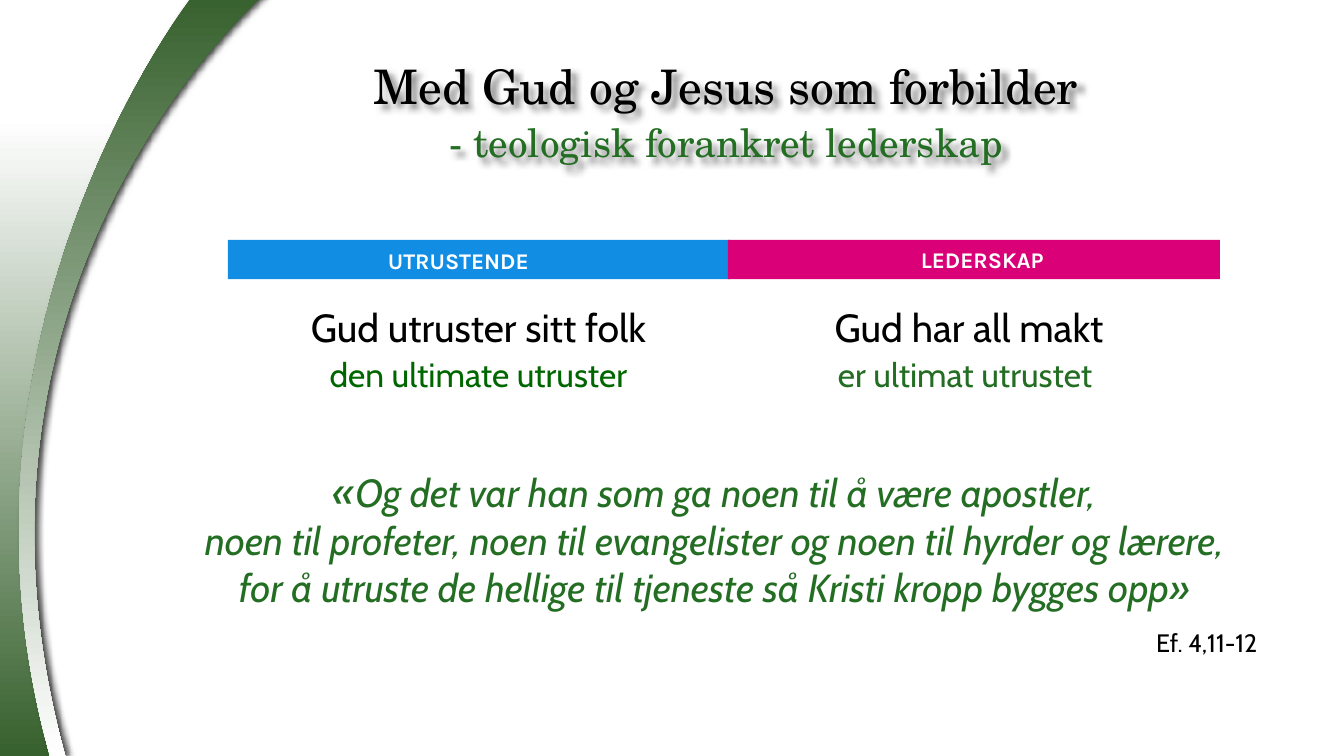
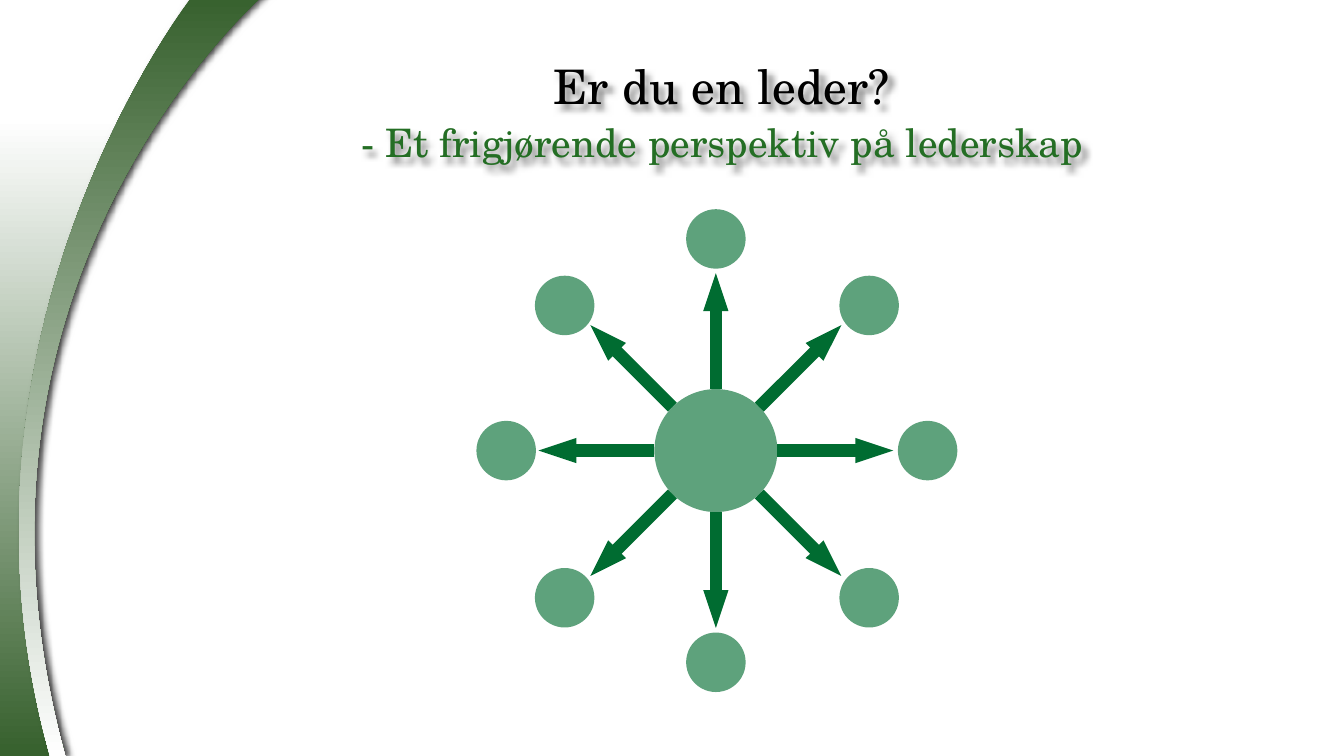
import math
from dataclasses import dataclass

from lxml import etree
from pptx import Presentation
from pptx.dml.color import RGBColor
from pptx.enum.shapes import MSO_CONNECTOR, MSO_SHAPE
from pptx.enum.text import MSO_ANCHOR, MSO_AUTO_SIZE, PP_ALIGN
from pptx.oxml.ns import qn
from pptx.util import Pt

PX = 9144
SLIDE_WIDTH, SLIDE_HEIGHT = 1333, 750
TWO_CONTENT, TITLE_ONLY = 3, 5
RECTANGLE, OVAL = MSO_SHAPE.RECTANGLE, MSO_SHAPE.OVAL
STRAIGHT = MSO_CONNECTOR.STRAIGHT
LEFT, CENTER, RIGHT = PP_ALIGN.LEFT, PP_ALIGN.CENTER, PP_ALIGN.RIGHT
MIDDLE, TOP = MSO_ANCHOR.MIDDLE, MSO_ANCHOR.TOP
NO_AUTOFIT = MSO_AUTO_SIZE.NONE


@dataclass(frozen=True)
class Theme:
    """Colours, fonts and type sizes of the deck."""
    black: str = "000000"
    white: str = "FFFFFF"
    green: str = "246E24"
    bright_green: str = "006600"
    forest: str = "36602D"
    network: str = "006C31"
    blue: str = "118DE4"
    pink: str = "DA0077"
    title_font: str = "TeX Gyre Schola"
    body_font: str = "Cabin"
    label_font: str = "Karla"
    title: int = 34
    opening_mark: int = 30
    lead: int = 28
    support: int = 24
    reference: int = 18
    label: int = 16


THEME = Theme()


def rgb(code):
    """Turn a hex code into a colour."""
    return RGBColor.from_string(code)


def emu(*lengths):
    """Scale px lengths to EMU."""
    return [round(length * PX) for length in lengths]


def place(part, box):
    """Move a part to a px box."""
    part.left, part.top, part.width, part.height = emu(*box)


def style_run(run, font, size, color, bold=False, italic=False):
    """Format one run."""
    run.font.name, run.font.size = font, Pt(size)
    run.font.bold, run.font.italic = bold, italic
    run.font.color.rgb = rgb(color)


def write(part, lines, font, align=CENTER, anchor=TOP, spacing=1.0, **emphasis):
    """Fill a part with one paragraph for each (text, size, colour) line."""
    frame = part.text_frame
    frame.text = "\n".join(text for text, _, _ in lines)
    frame.word_wrap, frame.auto_size = True, NO_AUTOFIT
    frame.vertical_anchor = anchor
    for paragraph, (_, size, color) in zip(frame.paragraphs, lines):
        paragraph.alignment, paragraph.line_spacing = align, spacing
        paragraph.space_before = Pt(0)
        style_run(paragraph.runs[0], font, size, color, **emphasis)
    return frame


def remove_bullets(part):
    """Clear bullets and indents."""
    for paragraph in part.element.iter(qn("a:p")):
        properties = paragraph.get_or_add_pPr()
        properties.set("marL", "0")
        properties.set("indent", "0")
        etree.SubElement(properties, qn("a:buNone"))


def add_shadow(part, blur, distance, angle, alpha):
    """Give a part a black outer shadow."""
    part.shadow.inherit = False
    shadow = etree.SubElement(
        part.element.spPr.find(qn("a:effectLst")), qn("a:outerShdw"),
        blurRad=str(Pt(blur)), dist=str(Pt(distance)),
        dir=str(angle * 60000), algn="tl", rotWithShape="0")
    color = etree.SubElement(shadow, qn("a:srgbClr"), val=THEME.black)
    etree.SubElement(color, qn("a:alpha"), val=str(alpha * 1000))


def add_solid(slide, kind, box, color, opacity=100):
    """Draw a borderless filled shape."""
    solid = slide.shapes.add_shape(kind, *emu(*box))
    solid.shadow.inherit = False
    solid.fill.solid()
    solid.fill.fore_color.rgb = rgb(color)
    solid.line.fill.background()
    if opacity < 100:
        fill = solid.element.spPr.find(qn("a:solidFill"))
        etree.SubElement(fill[0], qn("a:alpha"), val=str(opacity * 1000))
    return solid


def add_fade(slide, start, segments, top_color, bottom_color):
    """Draw lines (one point) and curves (three points) with a vertical gradient."""
    builder = slide.shapes.build_freeform(*emu(*start), scale=1.0)
    builder.add_line_segments(
        [emu(*point) for segment in segments for point in segment], close=True)
    fade = builder.convert_to_shape()
    steps = iter(list(fade.element.iter(qn("a:lnTo"))))
    for segment in segments:
        first, *others = [next(steps) for _ in segment]
        if others:
            first.tag = qn("a:cubicBezTo")
        for step in others:
            first.append(step[0])
            step.getparent().remove(step)
    fade.shadow.inherit = False
    fade.fill.gradient()
    fade.fill.gradient_angle = 270
    for stop, color in zip(fade.fill.gradient_stops, (top_color, bottom_color)):
        stop.color.rgb = rgb(color)
    fade.line.fill.background()
    return fade


def decorate_master(prs, slide):
    """Draw the curved side band and move it to the master."""
    corner = add_solid(slide, RECTANGLE, (-3, 0, 151, 123), THEME.white)
    band = add_fade(slide, (-3, 117), [
        [(62, 117), (38, 117), (148, 117)],
        [(-38, 432), (47, 689), (62, 750)],
        [(29, 750), (-3, 750), (-3, 750)],
        [(-14, 644), (-3, 117), (-3, 117)],
    ], THEME.white, THEME.forest)
    swoosh = add_fade(slide, (50, 751), [
        [(58, 751), (65, 751), (65, 751)],
        [(-67, 273), (264, -7), (264, -7)],
        [(194, -8)],
        [(194, -8), (-70, 326), (50, 751)],
    ], THEME.forest, THEME.white)
    add_shadow(swoosh, 5, 3, 0, 75)
    for position, part in enumerate((corner, band, swoosh), start=2):
        prs.slide_master.shapes.element.insert(position, part.element)


def add_heading(slide, box, title, subtitle):
    """Fill the title placeholder with a shadowed title and subtitle."""
    heading = slide.shapes.title
    place(heading, box)
    write(heading, [(title, THEME.title, THEME.black),
                    (subtitle, THEME.lead, THEME.green)],
          THEME.title_font, anchor=MIDDLE, spacing=1.1)
    add_shadow(heading, 4, 4, 45, 50)


def add_label(slide, box, label, align):
    """Write a bold white label over a bar."""
    caption = slide.shapes.add_textbox(*emu(*box))
    write(caption, [(label, THEME.label, THEME.white)], THEME.label_font,
          align=align, bold=True)


def add_statement(statement, box, lead, support, support_color):
    """Fill a body placeholder with a lead line and a support line."""
    place(statement, box)
    write(statement, [(lead, THEME.lead, THEME.black),
                      (support, THEME.support, support_color)],
          THEME.body_font, spacing=1.07)
    remove_bullets(statement)
    statement.text_frame.paragraphs[1].level = 1


def add_quote(slide, box, verses, reference):
    """Write an italic quotation with its reference at the right."""
    quote = slide.shapes.add_textbox(*emu(*box))
    lines = [(verse, THEME.lead, THEME.green) for verse in verses]
    lines.append((reference, THEME.reference, THEME.black))
    frame = write(quote, lines, THEME.body_font, italic=True)
    opening, source = frame.paragraphs[0], frame.paragraphs[-1]
    opening.text = verses[0][0]
    style_run(opening.runs[0], THEME.body_font, THEME.opening_mark, THEME.green, italic=True)
    remainder = opening.add_run()
    remainder.text = verses[0][1:]
    style_run(remainder, THEME.body_font, THEME.lead, THEME.green, italic=True)
    source.alignment, source.space_before = RIGHT, Pt(12)
    source.runs[0].font.italic = False


def add_arrow(slide, start, end):
    """Draw a thick arrow between two points."""
    arrow = slide.shapes.add_connector(STRAIGHT, *emu(*start, *end))
    arrow.line.color.rgb = rgb(THEME.network)
    arrow.line.width = Pt(9)
    etree.SubElement(arrow.element.spPr.find(qn("a:ln")), qn("a:tailEnd"),
                     type="triangle", w="sm", len="med")
    etree.SubElement(arrow.element.spPr, qn("a:effectLst"))


def add_network(slide, box):
    """Draw a hub with arrows to a ring of members inside a box."""
    left, top, width, height = box
    middle_x, middle_y = left + width / 2, top + height / 2
    hub_size, member_size, arrow_reach = 122, 59, 176
    members = [(0, -210), (152, -144), (210, 0), (152, 146),
               (0, 210), (-150, 146), (-208, 0), (-150, -144)]

    def spot(index, distance):
        """Return the point on a spoke at a distance from the hub."""
        angle = math.tau * index / len(members)
        return (middle_x + distance * math.sin(angle),
                middle_y - distance * math.cos(angle))

    def add_circle(x, y, size):
        """Draw a translucent circle at an offset from the hub."""
        add_solid(slide, OVAL,
                  (middle_x + x - size / 2, middle_y + y - size / 2, size, size),
                  THEME.network, opacity=63)

    for index in range(len(members)):
        add_arrow(slide, spot(index, hub_size / 2), spot(index, arrow_reach))
    add_circle(0, 0, hub_size)
    for x, y in members:
        add_circle(x, y, member_size)


def build_foundation_slide(slide):
    """Build the slide on theologically grounded leadership."""
    add_heading(slide, (273, 5, 894, 205), "Med Gud og Jesus som forbilder",
                "- teologisk forankret lederskap")
    add_solid(slide, RECTANGLE, (226, 238, 498, 39), THEME.blue)
    add_solid(slide, RECTANGLE, (722, 238, 488, 39), THEME.pink)
    add_label(slide, (375, 240, 244, 37), "UTRUSTENDE", LEFT)
    add_label(slide, (801, 239, 244, 37), "LEDERSKAP", RIGHT)
    add_statement(slide.placeholders[1], (141, 293, 667, 102), "Gud utruster sitt folk",
                  "den ultimate utruster", THEME.bright_green)
    add_statement(slide.placeholders[2], (712, 293, 498, 161), "Gud har all makt",
                  "er ultimat utrustet ", THEME.green)
    add_quote(slide, (168, 457, 1089, 209), [
        "«Og det var han som ga noen til å være apostler, ",
        "noen til profeter, noen til evangelister og noen til hyrder og lærere, ",
        "for å utruste de hellige til tjeneste så Kristi kropp bygges opp» ",
    ], "Ef. 4,11-12")


def build_leader_slide(slide):
    """Build the slide with the leadership network."""
    add_heading(slide, (265, 5, 902, 205), "Er du en leder?",
                "- Et frigjørende perspektiv på lederskap")
    add_network(slide, (470, 207, 480, 480))


def main():
    """Build and save the deck."""
    prs = Presentation()
    prs.slide_width, prs.slide_height = emu(SLIDE_WIDTH, SLIDE_HEIGHT)
    foundation = prs.slides.add_slide(prs.slide_layouts[TWO_CONTENT])
    decorate_master(prs, foundation)
    build_foundation_slide(foundation)
    build_leader_slide(prs.slides.add_slide(prs.slide_layouts[TITLE_ONLY]))
    prs.save("out.pptx")


if __name__ == "__main__":
    main()
